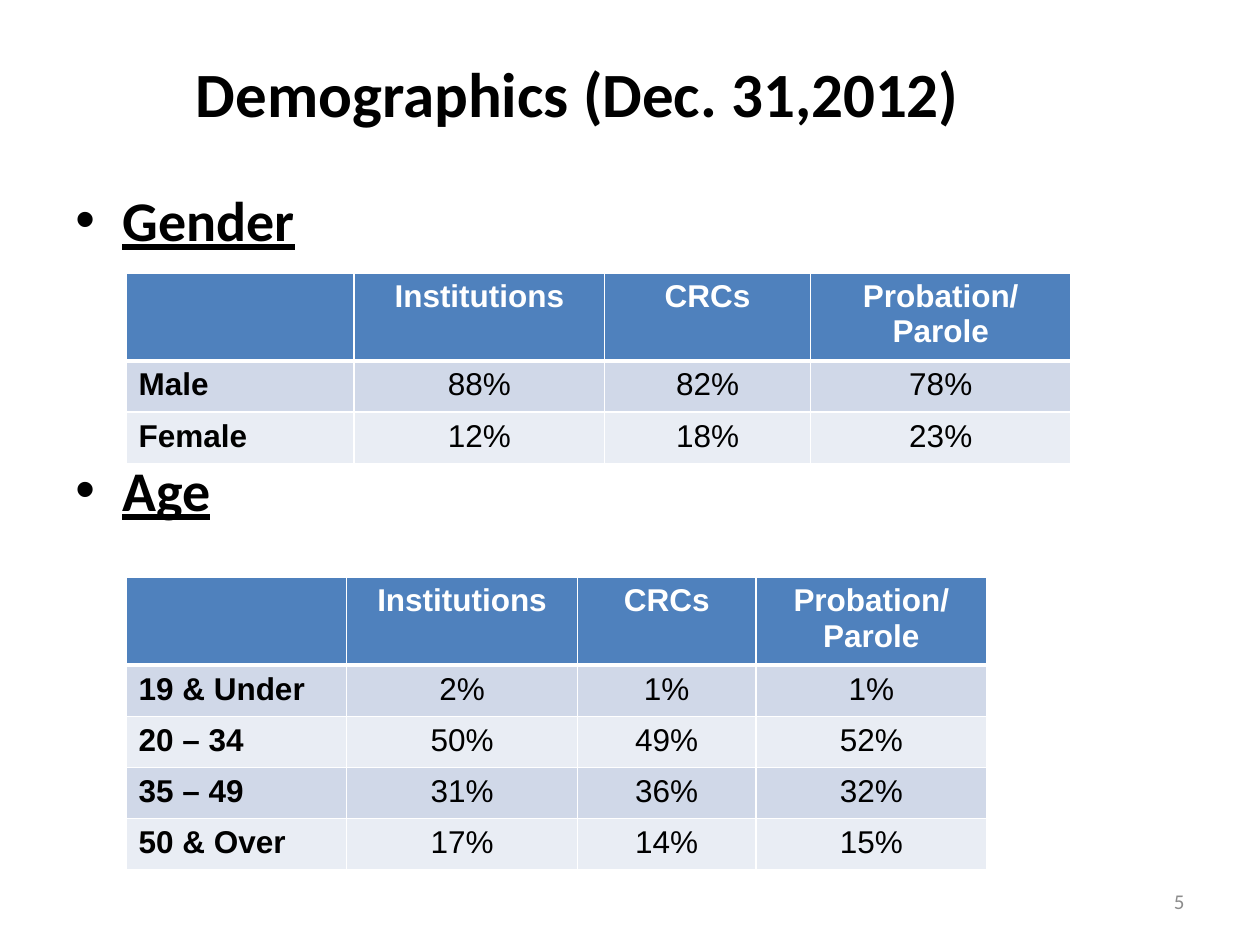
from lxml.etree import SubElement
from pptx import Presentation
from pptx.dml.color import RGBColor
from pptx.enum.text import MSO_ANCHOR, PP_ALIGN
from pptx.oxml.ns import qn
from pptx.util import Cm, Pt

COLORS = {
    "text": "000000",
    "number": "8C8C8C",
    "header": "4F81BD",
    "odd": "D0D8E8",
    "even": "E9EDF4",
    "white": "FFFFFF",
}
COLUMN_NAMES = ["", "Institutions", "CRCs"]
GENDER_ROWS = [
    COLUMN_NAMES + ["Probation/Parole"],
    ["Male", "88%", "82%", "78%"],
    ["Female", "12%", "18%", "23%"],
]
AGE_ROWS = [
    COLUMN_NAMES + ["Probation/ Parole"],
    ["19 & Under", "2%", "1%", "1%"],
    ["20 – 34", "50%", "49%", "52%"],
    ["35 – 49", "31%", "36%", "32%"],
    ["50 & Over", "17%", "14%", "15%"],
]


class SlideBuilder:
    text_font = "Calibri"
    table_font = "Arial"
    table_size = 18
    row_height = 1.03

    def __init__(self, slide):
        self.slide = slide

    def format_runs(self, paragraph, name, size, color, bold=False, underline=False):
        for run in paragraph.runs:
            run.font.name = name
            run.font.size = Pt(size)
            run.font.bold = bold
            run.font.underline = underline
            run.font.color.rgb = RGBColor.from_string(COLORS[color])

    def add_text_frame(self, left, top, width, height, text, anchor):
        shape = self.slide.shapes.add_textbox(Cm(left), Cm(top), Cm(width), Cm(height))
        text_frame = shape.text_frame
        text_frame.word_wrap = True
        text_frame.vertical_anchor = anchor
        text_frame.text = text
        return text_frame

    def add_line(self, left, top, width, height, text, align, size, color, bold=False):
        text_frame = self.add_text_frame(left, top, width, height, text, MSO_ANCHOR.MIDDLE)
        paragraph = text_frame.paragraphs[0]
        paragraph.alignment = align
        self.format_runs(paragraph, self.text_font, size, color, bold)

    def add_headings(self, left, top, width, height, headings, gap):
        text_frame = self.add_text_frame(
            left, top, width, height, "\n".join(headings), MSO_ANCHOR.TOP
        )
        for index, paragraph in enumerate(text_frame.paragraphs):
            paragraph.space_before = Pt(gap if index else 0)
            properties = paragraph._p.get_or_add_pPr()
            properties.set("marL", str(Cm(0.95)))
            properties.set("indent", str(-Cm(0.95)))
            SubElement(properties, qn("a:buFont"), typeface="Arial")
            SubElement(properties, qn("a:buChar"), char="•")
            self.format_runs(paragraph, self.text_font, 32, "text", True, True)

    def add_borders(self, cell, row_index):
        properties = cell._tc.get_or_add_tcPr()
        widths = {
            "lnL": 1,
            "lnR": 1,
            "lnT": 3 if row_index == 1 else 1,
            "lnB": 3 if row_index == 0 else 1,
        }
        for tag, width in widths.items():
            line = SubElement(properties, qn(f"a:{tag}"), w=str(Pt(width)))
            fill = SubElement(line, qn("a:solidFill"))
            SubElement(fill, qn("a:srgbClr"), val=COLORS["white"])

    def add_table(self, left, top, column_widths, rows):
        shape = self.slide.shapes.add_table(
            len(rows), len(column_widths), Cm(left), Cm(top),
            Cm(sum(column_widths)), Cm(self.row_height * len(rows)),
        )
        table = shape.table
        for column, width in zip(table.columns, column_widths):
            column.width = Cm(width)
        for row_index, values in enumerate(rows):
            is_header = row_index == 0
            band = "header" if is_header else ("odd" if row_index % 2 else "even")
            for column_index, value in enumerate(values):
                cell = table.cell(row_index, column_index)
                self.add_borders(cell, row_index)
                cell.fill.solid()
                cell.fill.fore_color.rgb = RGBColor.from_string(COLORS[band])
                cell.text_frame.text = value
                paragraph = cell.text_frame.paragraphs[0]
                paragraph.alignment = PP_ALIGN.CENTER if column_index else PP_ALIGN.LEFT
                self.format_runs(
                    paragraph, self.table_font, self.table_size,
                    "white" if is_header else "text",
                    is_header or column_index == 0,
                )


def main():
    presentation = Presentation()
    presentation.slide_width = Cm(25.4)
    presentation.slide_height = Cm(19.05)
    slide = presentation.slides.add_slide(presentation.slide_layouts[6])
    builder = SlideBuilder(slide)
    builder.add_line(1.27, 0.76, 20.75, 2.21, "Demographics (Dec. 31,2012)",
                     PP_ALIGN.CENTER, 36, "text", True)
    builder.add_headings(1.27, 3.61, 20.75, 13.97, ["Gender", "Age"], 116)
    builder.add_line(18.2, 17.65, 5.93, 1.02, "5", PP_ALIGN.RIGHT, 12, "number")
    builder.add_table(2.54, 5.5, [4.6, 5.05, 4.15, 5.25], GENDER_ROWS)
    builder.add_table(2.54, 11.63, [4.45, 4.65, 3.6, 4.65], AGE_ROWS)
    presentation.save("out.pptx")


if __name__ == "__main__":
    main()
